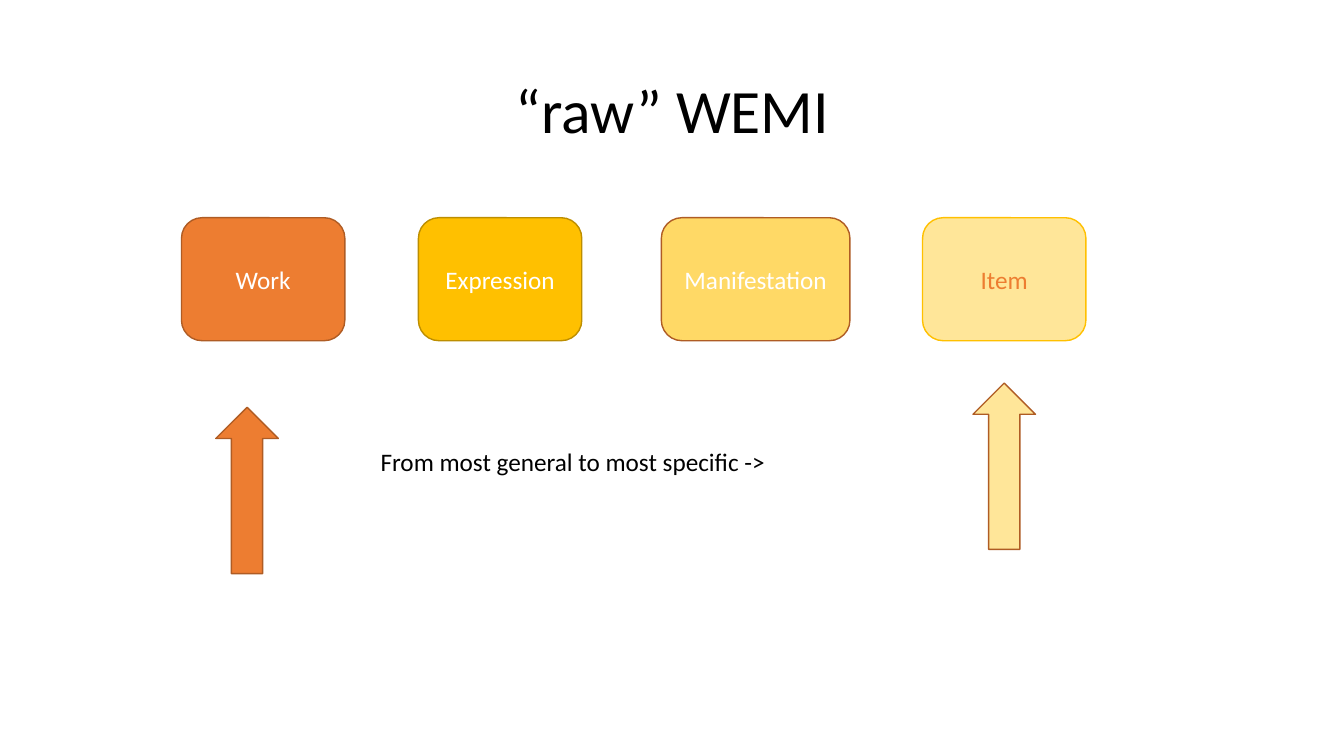
from pptx import Presentation
from pptx.dml.color import RGBColor
from pptx.enum.shapes import MSO_SHAPE
from pptx.enum.text import MSO_ANCHOR, MSO_AUTO_SIZE, PP_ALIGN
from pptx.util import Emu, Pt

PX = 9144  # EMU per px, at 100 px to the inch
ORANGE, DARK_ORANGE = "ED7D31", "AF5C24"
GOLD, DARK_GOLD = "FFC000", "BD8E00"
LIGHT_GOLD, PALE_GOLD = "FFD966", "FFE699"
WHITE, BLACK = "FFFFFF", "000000"

BOX_TOP, BOX_HEIGHT = 216, 122
# label, left, width, fill, line, text colour
ENTITIES = [
    ("Work", 180, 162, ORANGE, DARK_ORANGE, WHITE),
    ("Expression", 415, 162, GOLD, DARK_GOLD, WHITE),
    ("Manifestation", 656, 187, LIGHT_GOLD, DARK_ORANGE, WHITE),
    ("Item", 915, 162, PALE_GOLD, GOLD, ORANGE),
]
ARROW_WIDTH, ARROW_HEIGHT = 62, 165
# left, top, fill
ARROWS = [(214, 404, ORANGE), (965, 380, PALE_GOLD)]


def px(*lengths):
    return [Emu(length * PX) for length in lengths]


def color(hex_string):
    return RGBColor.from_string(hex_string)


def apply_format(target, values):
    for name, value in values.items():
        setattr(target, name, value)


def write_text(shape, text, size, text_color, alignment, **frame_format):
    frame = shape.text_frame
    apply_format(frame, {"word_wrap": True, **frame_format})
    paragraph = frame.paragraphs[0]
    paragraph.alignment = alignment
    run = paragraph.add_run()
    run.text = text
    apply_format(run.font, {"name": "Calibri", "size": Pt(size)})
    run.font.color.rgb = color(text_color)
    return paragraph


def add_preset(slide, preset, box, fill, line):
    shape = slide.shapes.add_shape(preset, *px(*box))
    shape.shadow.inherit = False
    shape.fill.solid()
    shape.fill.fore_color.rgb = color(fill)
    shape.line.color.rgb = color(line)
    shape.line.width = Pt(1)
    return shape


def add_entity(slide, label, left, width, fill, line, text_color):
    box = (left, BOX_TOP, width, BOX_HEIGHT)
    shape = add_preset(slide, MSO_SHAPE.ROUNDED_RECTANGLE, box, fill, line)
    write_text(shape, label, 18, text_color, PP_ALIGN.CENTER,
               vertical_anchor=MSO_ANCHOR.MIDDLE)


def add_caption(slide, text, box):
    caption = slide.shapes.add_textbox(*px(*box))
    write_text(caption, text, 18, BLACK, PP_ALIGN.LEFT,
               auto_size=MSO_AUTO_SIZE.SHAPE_TO_FIT_TEXT)


def set_title(slide, text, box):
    title = slide.shapes.title
    apply_format(title, dict(zip(("left", "top", "width", "height"), px(*box))))
    paragraph = write_text(title, text, 44, BLACK, PP_ALIGN.CENTER,
                           vertical_anchor=MSO_ANCHOR.MIDDLE)
    paragraph.line_spacing = 0.9


def main():
    presentation = Presentation()
    presentation.slide_width, presentation.slide_height = px(1333, 750)
    title_only = presentation.slide_layouts[5]
    slide = presentation.slides.add_slide(title_only)

    set_title(slide, "“raw” WEMI", (92, 40, 1150, 145))
    for entity in ENTITIES:
        add_entity(slide, *entity)
    for left, top, fill in ARROWS:
        add_preset(slide, MSO_SHAPE.UP_ARROW,
                   (left, top, ARROW_WIDTH, ARROW_HEIGHT), fill, DARK_ORANGE)
    add_caption(slide, " From most general to most specific ->",
                (362, 438, 553, 40))

    presentation.save("out.pptx")


if __name__ == "__main__":
    main()
